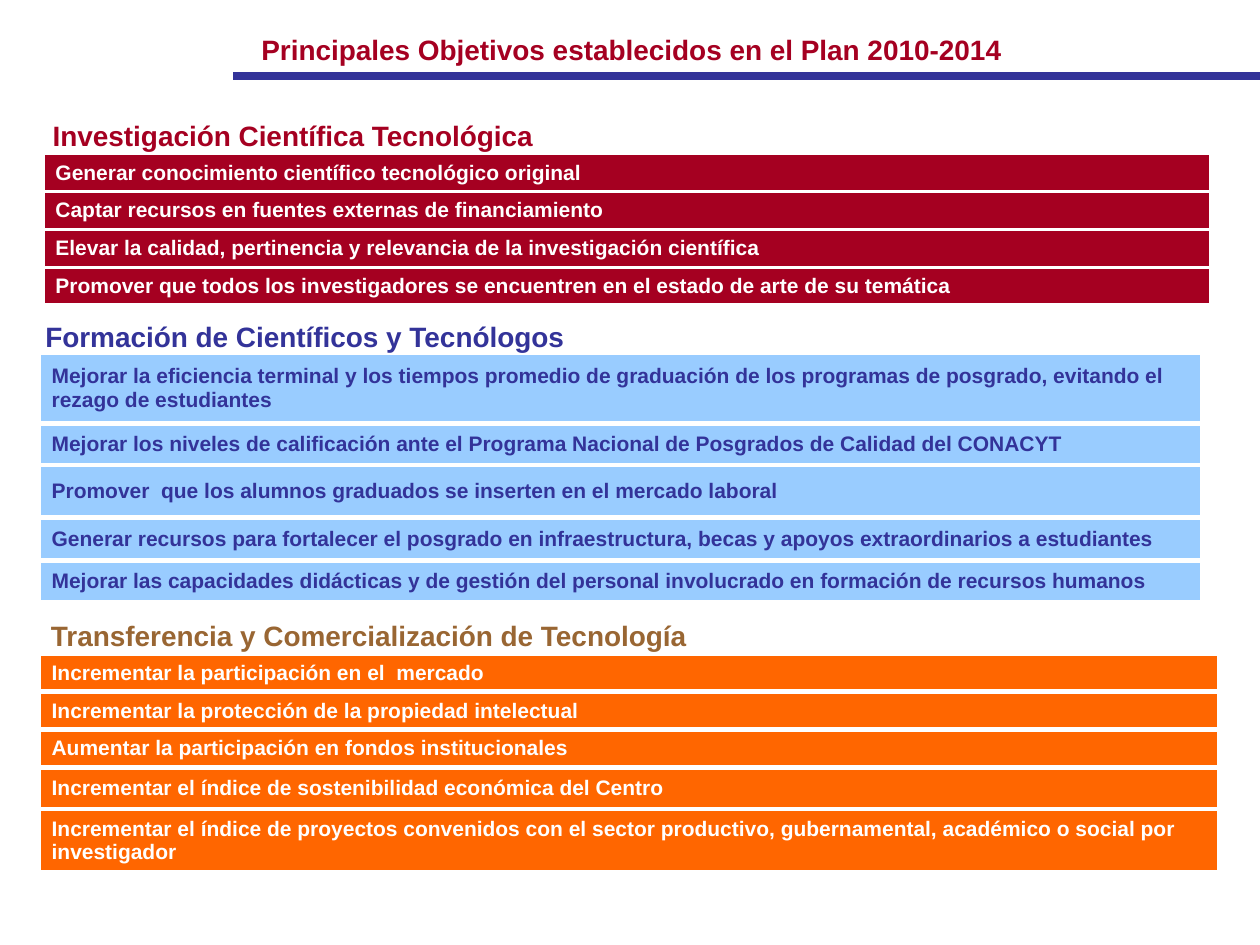
from dataclasses import dataclass

from lxml.etree import SubElement
from pptx import Presentation
from pptx.dml.color import RGBColor as RGB
from pptx.enum.shapes import MSO_CONNECTOR as CONNECTOR
from pptx.enum.text import MSO_ANCHOR as ANCHOR, MSO_AUTO_SIZE as AUTO_SIZE, PP_ALIGN as ALIGN
from pptx.oxml.ns import qn
from pptx.util import Inches, Pt


@dataclass(frozen=True)
class Theme:
    font: str = "Arial"
    heading: int = 16
    body: int = 12
    red: str = "A50021"
    navy: str = "333399"
    sky: str = "99CCFF"
    orange: str = "FF6600"
    brown: str = "996633"
    white: str = "FFFFFF"


T = Theme()


def style(p, size, color):
    for r in p.runs:
        r.font.name, r.font.size, r.font.bold = T.font, Pt(size), True
        r.font.color.rgb = RGB.from_string(color)


def add_heading(s, text, box, color):
    tf = s.shapes.add_textbox(*map(Inches, box)).text_frame
    tf.word_wrap = False
    tf.auto_size = AUTO_SIZE.SHAPE_TO_FIT_TEXT
    tf.text = text
    tf.paragraphs[0].alignment = ALIGN.RIGHT
    style(tf.paragraphs[0], T.heading, color)


# heading, heading box, heading colour, table (left, top, width),
# fill, text colour, border width, rows (height, objective)
SECTIONS = [
    ("Investigación Científica Tecnológica", (0.29, 0.89, 4.04, 0.37), T.red,
     (0.34, 1.22, 9.27), T.red, T.white, 2.25, [
         (0.29, "Generar conocimiento científico tecnológico original"),
         (0.29, "Captar recursos en fuentes externas de financiamiento"),
         (0.29, "Elevar la calidad, pertinencia y relevancia de la investigación científica"),
         (0.29, "Promover que todos los investigadores se encuentren en el estado de arte de su temática"),
     ]),
    ("Formación de Científicos y Tecnólogos", (0.23, 2.49, 4.35, 0.37), T.navy,
     (0.31, 2.8, 9.23), T.sky, T.navy, 3, [
         (0.56, "Mejorar la eficiencia terminal y los tiempos promedio de graduación de los "
                "programas de posgrado, evitando el rezago de estudiantes"),
         (0.33, "Mejorar los niveles de calificación ante el Programa Nacional de Posgrados "
                "de Calidad del CONACYT"),
         (0.42, "Promover  que los alumnos graduados se inserten en el mercado laboral"),
         (0.34, "Generar recursos para fortalecer el posgrado en infraestructura, becas y "
                "apoyos extraordinarios a estudiantes"),
         (0.33, "Mejorar las capacidades didácticas y de gestión del personal involucrado en "
                "formación de recursos humanos"),
     ]),
    ("Transferencia y Comercialización de Tecnología", (0.26, 4.86, 5.29, 0.37), T.brown,
     (0.31, 5.19, 9.37), T.orange, T.white, 3, [
         (0.3, "Incrementar la participación en el  mercado"),
         (0.3, "Incrementar la protección de la propiedad intelectual"),
         (0.3, "Aumentar la participación en fondos institucionales"),
         (0.33, "Incrementar el índice de sostenibilidad económica del Centro"),
         (0.5, "Incrementar el índice de proyectos convenidos con el sector productivo, "
               "gubernamental, académico o social por investigador"),
     ]),
]

prs = Presentation()
prs.slide_width, prs.slide_height = Inches(10), Inches(7.5)
s = prs.slides.add_slide(prs.slide_layouts[6])

rule = s.shapes.add_connector(CONNECTOR.STRAIGHT, Inches(1.85), Inches(0.6), Inches(10), Inches(0.6))
rule.line.color.rgb = RGB.from_string(T.navy)
rule.line.width = Pt(4.5)
SubElement(rule.element.spPr, qn("a:effectLst"))

add_heading(s, "Principales Objetivos establecidos en el Plan 2010-2014", (1.95, 0.21, 6.1, 0.37), T.red)

for heading, box, color, (left, top, width), fill, text_color, border, rows in SECTIONS:
    height = sum(h for h, _ in rows)
    table = s.shapes.add_table(len(rows), 1, Inches(left), Inches(top), Inches(width), Inches(height)).table
    table.first_row = table.horz_banding = False
    for i, (row_height, objective) in enumerate(rows):
        table.rows[i].height = Inches(row_height)
        cell = table.cell(i, 0)
        cell.text_frame.text = objective
        style(cell.text_frame.paragraphs[0], T.body, text_color)
        cell.vertical_anchor = ANCHOR.MIDDLE
        tcPr = cell._tc.get_or_add_tcPr()
        for side in ("lnL", "lnR", "lnT", "lnB"):
            ln = SubElement(tcPr, qn(f"a:{side}"), w=str(Pt(border)))
            SubElement(SubElement(ln, qn("a:solidFill")), qn("a:srgbClr"), val=T.white)
        cell.fill.solid()
        cell.fill.fore_color.rgb = RGB.from_string(fill)
    add_heading(s, heading, box, color)

prs.save("out.pptx")
